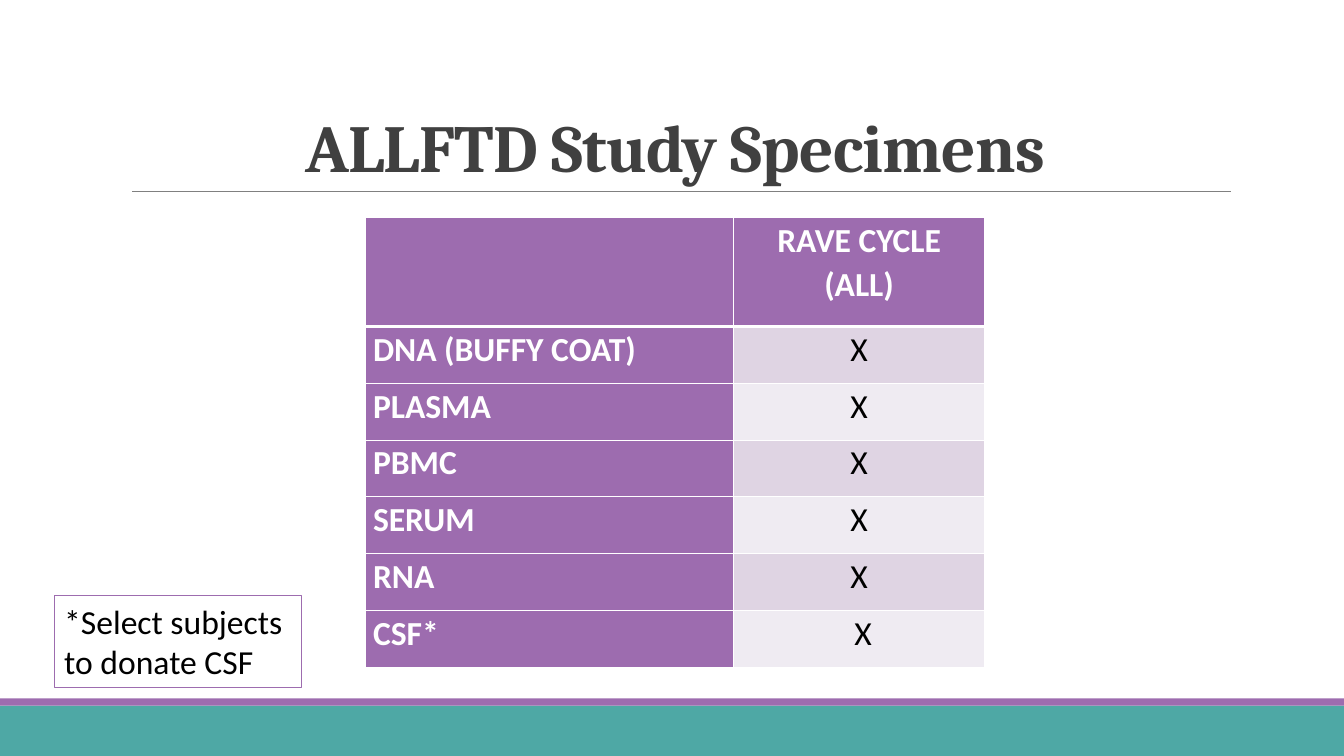
from dataclasses import dataclass

from lxml import etree
from pptx import Presentation
from pptx.dml.color import RGBColor
from pptx.enum.shapes import MSO_CONNECTOR, MSO_SHAPE
from pptx.enum.text import MSO_ANCHOR, MSO_AUTO_SIZE, PP_ALIGN
from pptx.oxml.ns import qn
from pptx.util import Cm, Pt

RECT, LINE = MSO_SHAPE.RECTANGLE, MSO_CONNECTOR.STRAIGHT
LEFT, CENTER = PP_ALIGN.LEFT, PP_ALIGN.CENTER
BOTTOM, GROW = MSO_ANCHOR.BOTTOM, MSO_AUTO_SIZE.SHAPE_TO_FIT_TEXT


@dataclass(frozen=True)
class Theme:
    teal: str = "4EA8A5"
    purple: str = "9D6CAF"
    bands: tuple = ("DFD4E3", "EFEBF2")
    gray: str = "808080"
    dark: str = "404040"
    white: str = "FFFFFF"
    black: str = "000000"
    head: str = "Cambria"
    body: str = "Calibri"
    big: int = 48
    text: int = 24


THEME = Theme()
WIDTH, HEIGHT = 33.87, 19.05
HEADS = ["", "RAVE CYCLE\n(ALL)"]
NAMES = ["DNA (BUFFY COAT)", "PLASMA", "PBMC", "SERUM", "RNA", "CSF*"]
ROWS = [HEADS] + [[name, "X"] for name in NAMES]


def rgb(code):
    return RGBColor.from_string(code)


def style(par, color, size=THEME.text, name=THEME.body, bold=False, **rest):
    """Format a paragraph; extra values apply to the paragraph itself."""
    looks = {"name": name, "size": Pt(size), "bold": bold}
    for run in par.runs:
        for key, value in looks.items():
            setattr(run.font, key, value)
        run.font.color.rgb = rgb(color)
    for key, value in rest.items():
        setattr(par, key, value)


def add_bar(slide, box, color):
    bar = slide.shapes.add_shape(RECT, *map(Cm, box))
    bar.shadow.inherit = False
    bar.fill.solid()
    bar.fill.fore_color.rgb = rgb(color)
    bar.line.fill.background()


def add_foot(slide, box):
    """Teal band topped by a thin purple strip."""
    left, top, width, height = box
    strip = 0.18
    add_bar(slide, (left, top + strip, width, height - strip), THEME.teal)
    add_bar(slide, (left, top, width, strip), THEME.purple)


def add_title(slide, box, text):
    """Title with a thin rule along its lower edge."""
    left, top, width, height = box
    base = top + height
    rule = slide.shapes.add_connector(
        LINE, Cm(left + 0.28), Cm(base), Cm(left + width + 0.02), Cm(base))
    rule.line.color.rgb = rgb(THEME.gray)
    rule.line.width = Pt(0.5)
    etree.SubElement(rule.element.spPr, qn("a:effectLst"))

    title = slide.shapes.title
    for key, value in zip(("left", "top", "width", "height"), box):
        setattr(title, key, Cm(value))
    frame = title.text_frame
    frame.text = text
    frame.vertical_anchor = BOTTOM
    frame.auto_size = MSO_AUTO_SIZE.NONE
    par = frame.paragraphs[0]
    style(par, THEME.dark, THEME.big, THEME.head, True,
          alignment=CENTER, line_spacing=0.85)
    par.runs[0].font._element.set("spc", "-50")


def add_edges(cell, sizes):
    """Draw white borders, given points by side."""
    props = cell._tc.get_or_add_tcPr()
    for side, size in sizes.items():
        edge = etree.SubElement(props, qn(f"a:ln{side}"), w=str(Pt(size)))
        fill = etree.SubElement(edge, qn("a:solidFill"))
        etree.SubElement(fill, qn("a:srgbClr"), val=THEME.white)


def fill_cell(cell, text, row, col):
    thick = {0: "B", 1: "T"}.get(row)
    add_edges(cell, {side: 3 if side == thick else 1 for side in "LRTB"})
    head = row == 0 or col == 0
    cell.fill.solid()
    cell.fill.fore_color.rgb = rgb(
        THEME.purple if head else THEME.bands[(row - 1) % 2])
    sides = {"margin_left": 0.18, "margin_right": 0.18,
             "margin_top": 0, "margin_bottom": 0}
    for key, value in sides.items():
        setattr(cell, key, Cm(value))
    cell.text = text
    for par in cell.text_frame.paragraphs:
        style(par, THEME.white if head else THEME.black, bold=head,
              alignment=CENTER if col else LEFT, line_spacing=1.07)


def add_grid(slide, box, rows):
    """Specimen table with a tall header row and equal rows below."""
    left, top, width, height = box
    first, tall = 9.27, 2.74
    grid = slide.shapes.add_table(
        len(rows), len(rows[0]), *map(Cm, box)).table
    for col, size in zip(grid.columns, (first, width - first)):
        col.width = Cm(size)
    low = (height - tall) / (len(rows) - 1)
    for i, texts in enumerate(rows):
        grid.rows[i].height = Cm(low if i else tall)
        for j, text in enumerate(texts):
            fill_cell(grid.cell(i, j), text, i, j)
    grid.cell(len(rows) - 1, 1).margin_left = Cm(0.38)


def add_note(slide, box, text):
    note = slide.shapes.add_textbox(*map(Cm, box))
    note.line.color.rgb = rgb(THEME.purple)
    note.line.width = Pt(0.75)
    frame = note.text_frame
    frame.word_wrap = True
    frame.auto_size = GROW
    frame.text = text
    style(frame.paragraphs[0], THEME.black, alignment=LEFT)


def main():
    deck = Presentation()
    deck.slide_width, deck.slide_height = Cm(WIDTH), Cm(HEIGHT)
    slide = deck.slides.add_slide(deck.slide_layouts[5])
    add_foot(slide, (0, 17.6, WIDTH, HEIGHT - 17.6))
    add_title(slide, (3.05, 0.79, 27.94, 4.04), "ALLFTD Study Specimens")
    add_grid(slide, (9.22, 5.49, 15.59, 11.32), ROWS)
    add_note(slide, (1.37, 15.01, 6.22, 2.31),
             "*Select subjects to donate CSF")
    deck.save("out.pptx")


if __name__ == "__main__":
    main()
